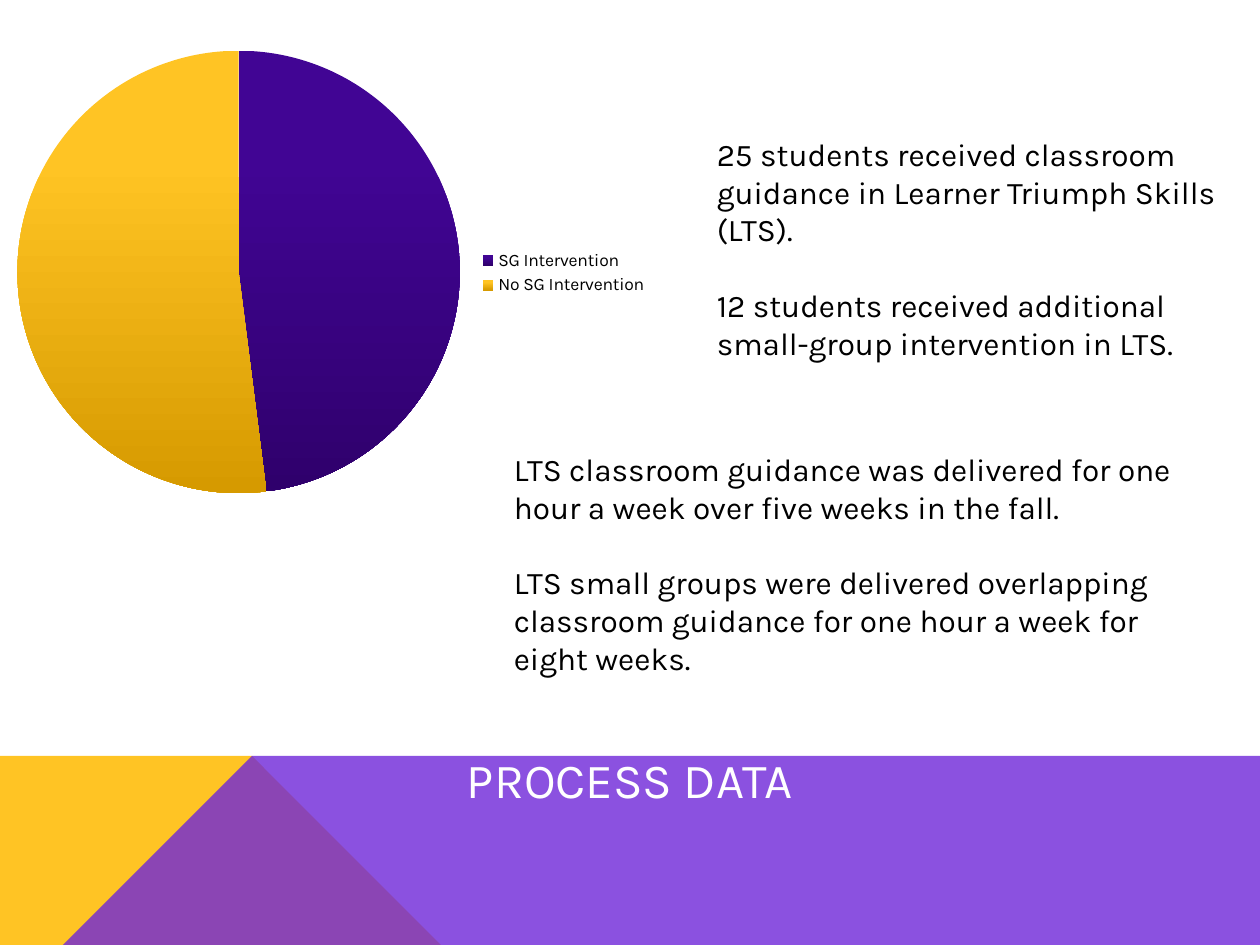
from lxml.etree import SubElement
from pptx import Presentation
from pptx.chart.data import CategoryChartData
from pptx.dml.color import RGBColor
from pptx.enum.chart import XL_CHART_TYPE, XL_LEGEND_POSITION
from pptx.enum.text import MSO_ANCHOR, PP_ALIGN
from pptx.oxml.ns import qn
from pptx.util import Inches, Pt

WIDTH, HEIGHT = 10, 7.5
FONT = "Karla"
BAND_TOP, PEAK = 5.52, 2.23
LINE_GAP = 21.5

TITLE = ["PROCESS DATA"]
STUDENTS = [
    "25 students received classroom guidance in Learner Triumph Skills (LTS).",
    "12 students received additional small-group intervention in LTS.",
]
DELIVERY = [
    "LTS classroom guidance was delivered for one hour a week over five weeks in the fall.",
    "LTS small groups were delivered overlapping classroom guidance for one hour a week for \veight weeks.",
]
SLICES = [
    ("SG Intervention", 48, "410594", "2F006C"),
    ("No SG Intervention", 52, "FFC424", "D69A00"),
]
BANDS = [
    ([(0, HEIGHT), (0, BAND_TOP), (PEAK, BAND_TOP), (3.91, HEIGHT)], "FFC424", 100),
    ([(0, HEIGHT), (PEAK, BAND_TOP), (WIDTH, BAND_TOP), (WIDTH, HEIGHT)], "6F26D9", 80),
]
PLOT_SHARE = {"x": 0.026, "y": 0.093, "w": 0.671, "h": 0.811}


def color(value):
    return RGBColor.from_string(value)


def add_band(slide, points, fill, opacity):
    builder = slide.shapes.build_freeform(*points[0], scale=Inches(1))
    builder.add_line_segments(points[1:], close=True)
    shape = builder.convert_to_shape()
    shape.shadow.inherit = False
    shape.fill.solid()
    shape.fill.fore_color.rgb = color(fill)
    shape.line.fill.background()
    if opacity < 100:
        tint = shape.fill._xPr.find(".//" + qn("a:srgbClr"))
        SubElement(tint, qn("a:alpha"), val=str(opacity * 1000))


def add_text(slide, paragraphs, box, size=18, fill="000000",
             align=PP_ALIGN.LEFT, anchor=MSO_ANCHOR.TOP):
    frame = slide.shapes.add_textbox(*map(Inches, box)).text_frame
    frame.word_wrap = True
    frame.vertical_anchor = anchor
    for index, text in enumerate(paragraphs):
        paragraph = frame.add_paragraph() if index else frame.paragraphs[0]
        paragraph.text = text
        paragraph.alignment = align
        paragraph.space_before = Pt(LINE_GAP if index else 0)
        for run in paragraph.runs:
            run.font.name = FONT
            run.font.size = Pt(size)
            run.font.color.rgb = color(fill)


def add_pie(slide, box):
    data = CategoryChartData()
    data.categories = [name for name, *_ in SLICES]
    data.add_series("Series 1", [value for _, value, *_ in SLICES])
    chart = slide.shapes.add_chart(XL_CHART_TYPE.PIE, *map(Inches, box), data).chart
    chart.has_title = False
    chart.font.name = FONT
    chart.font.size = Pt(10)
    chart.font.color.rgb = color("000000")
    chart.has_legend = True
    chart.legend.position = XL_LEGEND_POSITION.RIGHT
    chart.legend.include_in_layout = False
    plot = chart.plots[0]
    plot.vary_by_categories = True
    for index, (_, _, *shades) in enumerate(SLICES):
        style = plot.series[0].points[index].format
        style.fill.gradient()
        style.fill.gradient_angle = 270
        for stop, shade, position in zip(style.fill.gradient_stops, shades, (0.25, 1)):
            stop.color.rgb = color(shade)
            stop.position = position
        style.line.fill.background()
    area = chart._chartSpace.find(".//" + qn("c:plotArea"))
    for old in area.findall(qn("c:layout")):
        area.remove(old)
    layout = SubElement(area, qn("c:layout"))
    area.insert(0, layout)
    manual = SubElement(layout, qn("c:manualLayout"))
    SubElement(manual, qn("c:layoutTarget"), val="inner")
    for axis in "xy":
        SubElement(manual, qn(f"c:{axis}Mode"), val="edge")
    for key, share in PLOT_SHARE.items():
        SubElement(manual, qn(f"c:{key}"), val=str(share))


def main():
    presentation = Presentation()
    presentation.slide_width = Inches(WIDTH)
    presentation.slide_height = Inches(HEIGHT)
    slide = presentation.slides.add_slide(presentation.slide_layouts[6])
    for band in BANDS:
        add_band(slide, *band)
    add_text(slide, TITLE, (0, 5.88, WIDTH, 0.6), size=28, fill="FFFFFF",
             align=PP_ALIGN.CENTER, anchor=MSO_ANCHOR.MIDDLE)
    add_pie(slide, (0, 0, 5.24, 4.33))
    add_text(slide, STUDENTS, (5.59, 1.02, 4.19, 1.92))
    add_text(slide, DELIVERY, (3.98, 3.52, 5.8, 1.92))
    presentation.save("out.pptx")


if __name__ == "__main__":
    main()
